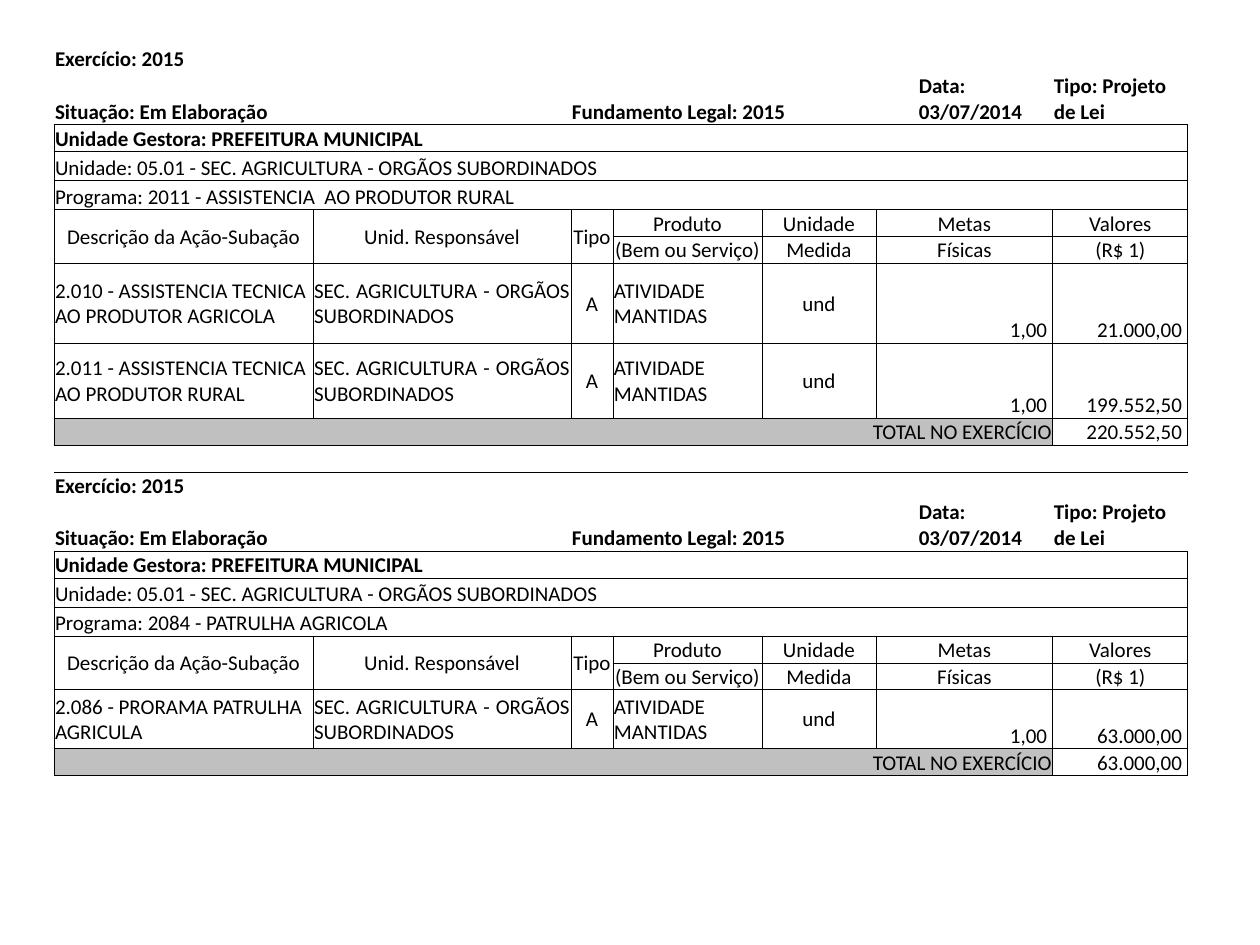
from itertools import product

from lxml.etree import SubElement
from pptx import Presentation
from pptx.dml.color import RGBColor
from pptx.enum.text import MSO_ANCHOR, PP_ALIGN
from pptx.oxml.ns import qn
from pptx.util import Emu, Pt

SCALE = 914400 / 126  # EMU in one px
COLORS = {"ink": "000000", "paper": "FFFFFF", "total": "C0C0C0"}
NO_STYLE = "{2D5ABB26-0587-4C30-8999-92F81FD0307C}"
COLS = [259, 258, 42, 149, 114, 42, 135, 135]
ALIGN = {"l": PP_ALIGN.LEFT, "c": PP_ALIGN.CENTER,
         "r": PP_ALIGN.RIGHT, "j": PP_ALIGN.JUSTIFY}
ANCHOR = {"m": MSO_ANCHOR.MIDDLE, "b": MSO_ANCHOR.BOTTOM}

# Row heights shared by both reports
HEAD_ROWS = [26, 52, 27, 29, 29, 27, 26]
LINE_ROW = 27

REPORTS = [
    {"program": "2011 - ASSISTENCIA  AO PRODUTOR RURAL",
     "actions": [("2.010 - ASSISTENCIA TECNICA AO PRODUTOR AGRICOLA", "21.000,00", 80),
                 ("2.011 - ASSISTENCIA TECNICA AO PRODUTOR RURAL", "199.552,50", 75)],
     "total": "220.552,50"},
    {"program": "2084 - PATRULHA AGRICOLA",
     "actions": [("2.086 - PRORAMA PATRULHA AGRICULA", "63.000,00", 59)],
     "total": "63.000,00"},
]


def px(n):
    return Emu(round(n * SCALE))


class Sheet:
    """Style and current slide, with its current table."""

    font = {"name": "Calibri", "size": Pt(12)}
    margins = {"margin_left": px(1), "margin_right": px(1),
               "margin_top": px(1), "margin_bottom": px(0)}

    def __init__(self, prs):
        self.s = prs.slides.add_slide(prs.slide_layouts[6])

    def table(self, x, y, cols, rows):
        frame = self.s.shapes.add_table(len(rows), len(cols), px(x), px(y),
                                        px(sum(cols)), px(sum(rows)))
        self.tbl = frame.table
        self.tbl.first_row = self.tbl.horz_banding = False
        self.tbl._tbl.tblPr.find(qn("a:tableStyleId")).text = NO_STYLE
        for col, w in zip(self.tbl.columns, cols):
            col.width = px(w)
        for row, h in zip(self.tbl.rows, rows):
            row.height = px(h)

    def border(self, cell, sides):
        tcPr = cell._tc.get_or_add_tcPr()
        for side in "LRTB":
            if side in sides:
                ln = SubElement(tcPr, qn(f"a:ln{side}"), w=str(Pt(0.5)))
                fill = SubElement(ln, qn("a:solidFill"))
                SubElement(fill, qn("a:srgbClr"), val=COLORS["ink"])

    def cell(self, row, col, text="", span=(1, 1), align="l", anchor="b",
             bold=False, fill=None, sides="LRTB"):
        cell = self.tbl.cell(row, col)
        if span != (1, 1):
            cell.merge(self.tbl.cell(row + span[0] - 1, col + span[1] - 1))
        for i, j in product(range(span[0]), range(span[1])):
            part = self.tbl.cell(row + i, col + j)
            self.border(part, sides)
            if fill:
                part.fill.solid()
                part.fill.fore_color.rgb = RGBColor.from_string(COLORS[fill])
            else:
                part.fill.background()
        fmt = {**self.margins, "vertical_anchor": ANCHOR[anchor]}
        for name, value in fmt.items():
            setattr(cell, name, value)
        p = cell.text_frame.paragraphs[0]
        p.alignment = ALIGN[align]
        if not text:
            SubElement(p._p, qn("a:endParaRPr"), sz="1200")
            return
        r = p.add_run()
        r.text = text
        for name, value in {**self.font, "bold": bold}.items():
            setattr(r.font, name, value)
        r.font.color.rgb = RGBColor.from_string(COLORS["ink"])

    def heading(self, row, program):
        """Identification lines and column titles; returns the next row."""
        top = {"bold": True, "fill": "paper"}
        self.cell(row, 0, "Exercício: 2015", (1, 8), sides="", **top)
        self.cell(row + 1, 0, "Situação: Em Elaboração", (1, 2), sides="B", **top)
        self.cell(row + 1, 2, "Fundamento Legal: 2015", (1, 4), sides="B", **top)
        self.cell(row + 1, 6, "Data: 03/07/2014", bold=True, sides="B")
        self.cell(row + 1, 7, "Tipo: Projeto de Lei", sides="B", **top)
        self.cell(row + 2, 0, "Unidade Gestora: PREFEITURA MUNICIPAL", (1, 8), **top)
        self.cell(row + 3, 0, "Unidade: 05.01 - SEC. AGRICULTURA - ORGÃOS SUBORDINADOS",
                  (1, 8))
        self.cell(row + 4, 0, f"Programa: {program}", (1, 8))
        titles = ["Descrição da Ação-Subação", "Unid. Responsável", "Tipo"]
        for col, title in enumerate(titles):
            self.cell(row + 5, col, title, (2, 1), "c", "m")
        pairs = [(3, 1, "Produto", "(Bem ou Serviço)"), (4, 1, "Unidade", "Medida"),
                 (5, 2, "Metas", "Físicas"), (7, 1, "Valores", "(R$ 1)")]
        for col, width, upper, lower in pairs:
            self.cell(row + 5, col, upper, (1, width), "c", sides="LRT")
            self.cell(row + 6, col, lower, (1, width), "c", sides="LRB")
        return row + len(HEAD_ROWS)

    def action(self, row, name, value):
        texts = [(name, "l"), ("SEC. AGRICULTURA - ORGÃOS SUBORDINADOS", "j"),
                 ("A", "c"), ("ATIVIDADE MANTIDAS", "j"), ("und", "c")]
        for col, (text, align) in enumerate(texts):
            self.cell(row, col, text, align=align, anchor="m")
        self.cell(row, 5, "1,00 ", (1, 2), "r")
        self.cell(row, 7, f"{value} ", align="r")

    def total(self, row, value):
        self.cell(row, 0, "TOTAL NO EXERCÍCIO", (1, 7), "r", fill="total")
        self.cell(row, 7, f"{value} ", align="r")


def main():
    prs = Presentation()
    prs.slide_width, prs.slide_height = px(1260), px(945)
    sheet = Sheet(prs)

    # One table holds both reports, with an empty row between them
    rows = []
    for report in REPORTS:
        if rows:
            rows.append(LINE_ROW)
        rows += HEAD_ROWS + [h for _, _, h in report["actions"]] + [LINE_ROW]
    sheet.table(54, 46, COLS, rows)

    row = 0
    for report in REPORTS:
        if row:
            for col in range(len(COLS)):
                sheet.cell(row, col, sides="T")
            row += 1
        row = sheet.heading(row, report["program"])
        for name, value, _ in report["actions"]:
            sheet.action(row, name, value)
            row += 1
        sheet.total(row, report["total"])
        row += 1

    prs.save("out.pptx")


if __name__ == "__main__":
    main()
